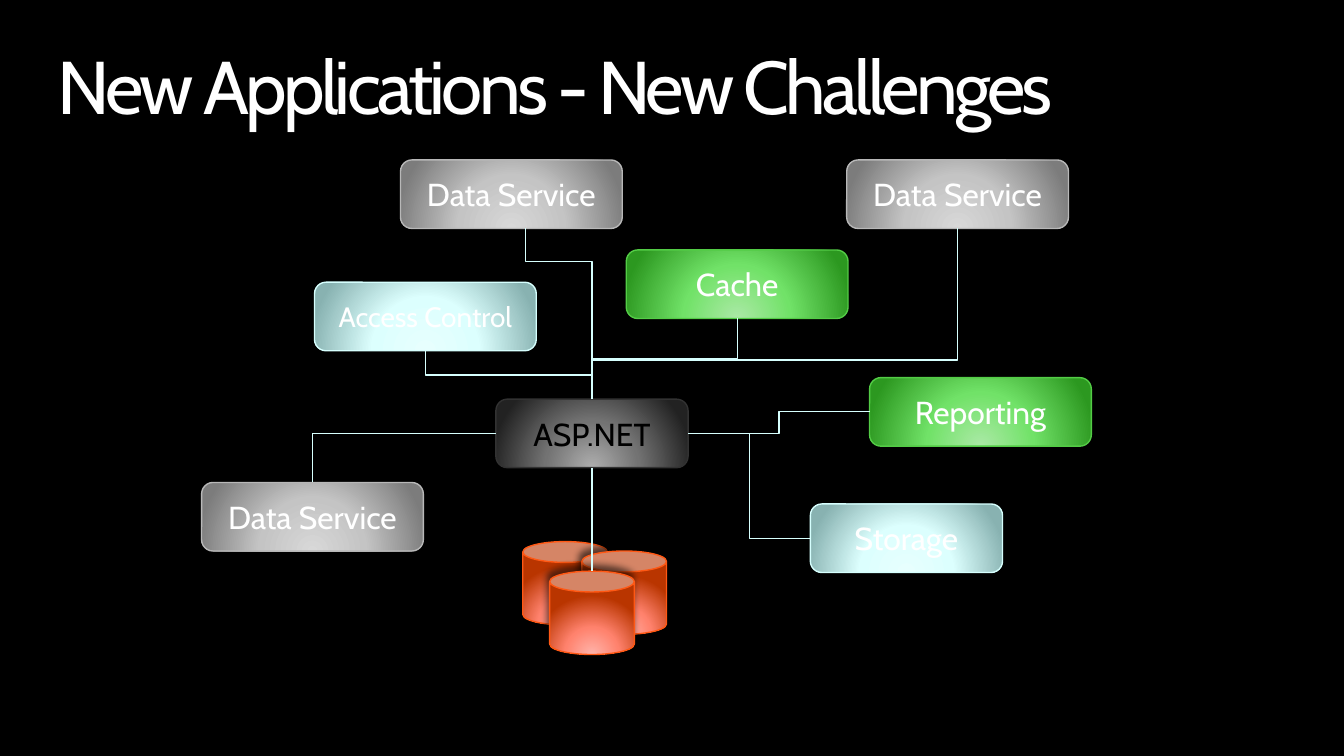
from pptx import Presentation, util as u
from pptx.dml.color import RGBColor
from pptx.enum import shapes, text
from pptx.oxml import parse_xml
from pptx.oxml.ns import nsdecls, qn

FONT = "Cabin"
WHITE, BLACK, PALE = "FFFFFF", "000000", "D6FFFE"
TOP, LEFT, BOTTOM, RIGHT = range(4)  # connection sites of a box

# Gradient stops at 0, 46 and 100 %, then the outline
GREY = ("D8D8D8", "C4C4C4", "7C7C7C", "B8B8B8")
DARK = ("AEAEAE", "737373", "222222", "323232")
GREEN = ("ABE9A6", "71E268", "2C9820", "53CC46")
AQUA = ("E7FFFE", "DCFFFE", "88B2B1", PALE)
ORANGE = ("FFB4AB", "FF826D", "B93500", "FF5814")


def write(shape, words, size=17, color=WHITE, align=text.PP_ALIGN.CENTER,
          anchor=text.MSO_ANCHOR.MIDDLE, inset=(0.08, 0.04), line_spacing=None, tracking=None):
    """Put one formatted line in a shape; inset is horizontal, vertical; tracking is in points."""
    frame = shape.text_frame
    frame.word_wrap = True
    frame.vertical_anchor = anchor
    frame.margin_left = frame.margin_right = u.Inches(inset[0])
    frame.margin_top = frame.margin_bottom = u.Inches(inset[1])
    paragraph = frame.paragraphs[0]
    paragraph.alignment = align
    paragraph.line_spacing = line_spacing
    run = paragraph.add_run()
    run.text = words
    run.font.name = FONT
    run.font.size = u.Pt(size)
    run.font.color.rgb = RGBColor.from_string(color)
    if tracking:
        run._r.get_or_add_rPr().set("spc", str(tracking * 100))


def add_glossy(kind, left, top, width, height, palette):
    """Add a shape lit from below, with a thin outline and a soft shadow."""
    shape = slide.shapes.add_shape(
        kind, u.Inches(left), u.Inches(top), u.Inches(width), u.Inches(height))
    stops = "".join(f'<a:gs pos="{pos}000"><a:srgbClr val="{color}"/></a:gs>'
                    for pos, color in zip((0, 46, 100), palette))
    properties = shape._element.spPr
    properties.find(qn("a:prstGeom")).addnext(parse_xml(
        f'<a:gradFill {nsdecls("a")} rotWithShape="1"><a:gsLst>{stops}</a:gsLst><a:path path="circle">'
        '<a:fillToRect l="50000" t="155000" r="50000" b="-55000"/></a:path></a:gradFill>'))
    shape.line.color.rgb = RGBColor.from_string(palette[3])
    shape.line.width = u.Pt(0.75)
    shape.shadow.inherit = False
    properties.find(qn("a:effectLst")).append(parse_xml(
        f'<a:outerShdw {nsdecls("a")} blurRad="{u.Pt(4)}" dist="{u.Pt(3)}" dir="{245 * 60000}" '
        'algn="tl" rotWithShape="0"><a:srgbClr val="000000"><a:alpha val="60000"/></a:srgbClr>'
        '</a:outerShdw>'))
    return shape


deck = Presentation()
deck.slide_width = u.Inches(10)
deck.slide_height = deck.slide_width * 9 // 16
slide = deck.slides.add_slide(deck.slide_layouts[6])
slide.background.fill.solid()
slide.background.fill.fore_color.rgb = RGBColor.from_string(BLACK)

title = slide.shapes.add_textbox(u.Inches(0.43), u.Inches(0.37), u.Inches(9.15), u.Inches(0.61))
write(title, "New Applications - New Challenges", size=40, align=text.PP_ALIGN.LEFT,
      anchor=text.MSO_ANCHOR.TOP, inset=(0, 0), line_spacing=0.9, tracking=-2)

WIDE, NARROW, BOX_HEIGHT = 1.65, 1.43, 0.51
services = {
    "access": ("Access Control", 2.34, 2.1, WIDE, AQUA, dict(size=15, inset=(0, 0.04))),
    "cache": ("Cache", 4.66, 1.86, WIDE, GREEN, {}),
    "reporting": ("Reporting", 6.47, 2.81, WIDE, GREEN, {}),
    "hub": ("ASP.NET", 3.69, 2.97, NARROW, DARK, dict(color=BLACK)),
    "storage": ("Storage", 6.03, 3.75, NARROW, AQUA, {}),
    "data right": ("Data Service", 6.3, 1.19, WIDE, GREY, {}),
    "data middle": ("Data Service", 2.98, 1.19, WIDE, GREY, {}),
    "data left": ("Data Service", 1.5, 3.59, WIDE, GREY, {}),
}
nodes = {}
for key, (label, left, top, width, palette, style) in services.items():
    nodes[key] = add_glossy(shapes.MSO_SHAPE.ROUNDED_RECTANGLE, left, top, width, BOX_HEIGHT, palette)
    write(nodes[key], label, **style)

# The last, front cylinder is the one linked to the hub
for left, top in ((3.89, 4.03), (4.33, 4.1), (4.09, 4.25)):
    nodes["database"] = add_glossy(shapes.MSO_SHAPE.CAN, left, top, 0.63, 0.62, ORANGE)

# Start, its site, end, its site, position of the bend in % (None for a single corner)
links = [
    ("cache", BOTTOM, "hub", TOP, 50),
    ("access", BOTTOM, "hub", TOP, 50),
    ("hub", RIGHT, "reporting", LEFT, 50),
    ("hub", RIGHT, "storage", LEFT, 50),
    ("hub", BOTTOM, "database", TOP, 50),
    ("data right", BOTTOM, "hub", TOP, 77.2),
    ("data middle", BOTTOM, "hub", TOP, 19.3),
    ("hub", LEFT, "data left", TOP, None),
]
for start, start_site, end, end_site, bend in links:
    # The middle data service is left at a free point, right of its centre
    link = slide.shapes.add_connector(
        shapes.MSO_CONNECTOR.ELBOW, u.Inches(3.91), u.Inches(1.7), u.Inches(4.41), u.Inches(2.97))
    if start != "data middle":
        link.begin_connect(nodes[start], start_site)
    link.end_connect(nodes[end], end_site)
    link.line.color.rgb = RGBColor.from_string(PALE)
    link.line.width = u.Pt(0.75)
    properties = link._element.spPr
    properties.append(parse_xml(f'<a:effectLst {nsdecls("a")}/>'))

    if end == "database":  # a cylinder numbers its upper rim 1
        link._element.find(".//" + qn("a:endCxn")).set("idx", "1")

    geometry = properties.find(qn("a:prstGeom"))
    if bend is None:
        geometry.set("prst", "bentConnector2")
    else:
        geometry.get_or_add_avLst().append(parse_xml(
            f'<a:gd {nsdecls("a")} name="adj1" fmla="val {round(bend * 1000)}"/>'))

    if start_site == BOTTOM:  # a link that leaves downwards is a turned elbow
        across, down = link.end_x - link.begin_x, link.end_y - link.begin_y
        middle_x = (link.begin_x + link.end_x) // 2
        middle_y = (link.begin_y + link.end_y) // 2
        link.width, link.height = down, abs(across)
        link.left, link.top = middle_x - down // 2, middle_y - abs(across) // 2
        frame = properties.find(qn("a:xfrm"))
        frame.set("flipH", "0" if across < 0 else "1")
        frame.set("flipV", "0")
        frame.set("rot", str((90 if across < 0 else 270) * 60000))

deck.save("out.pptx")
